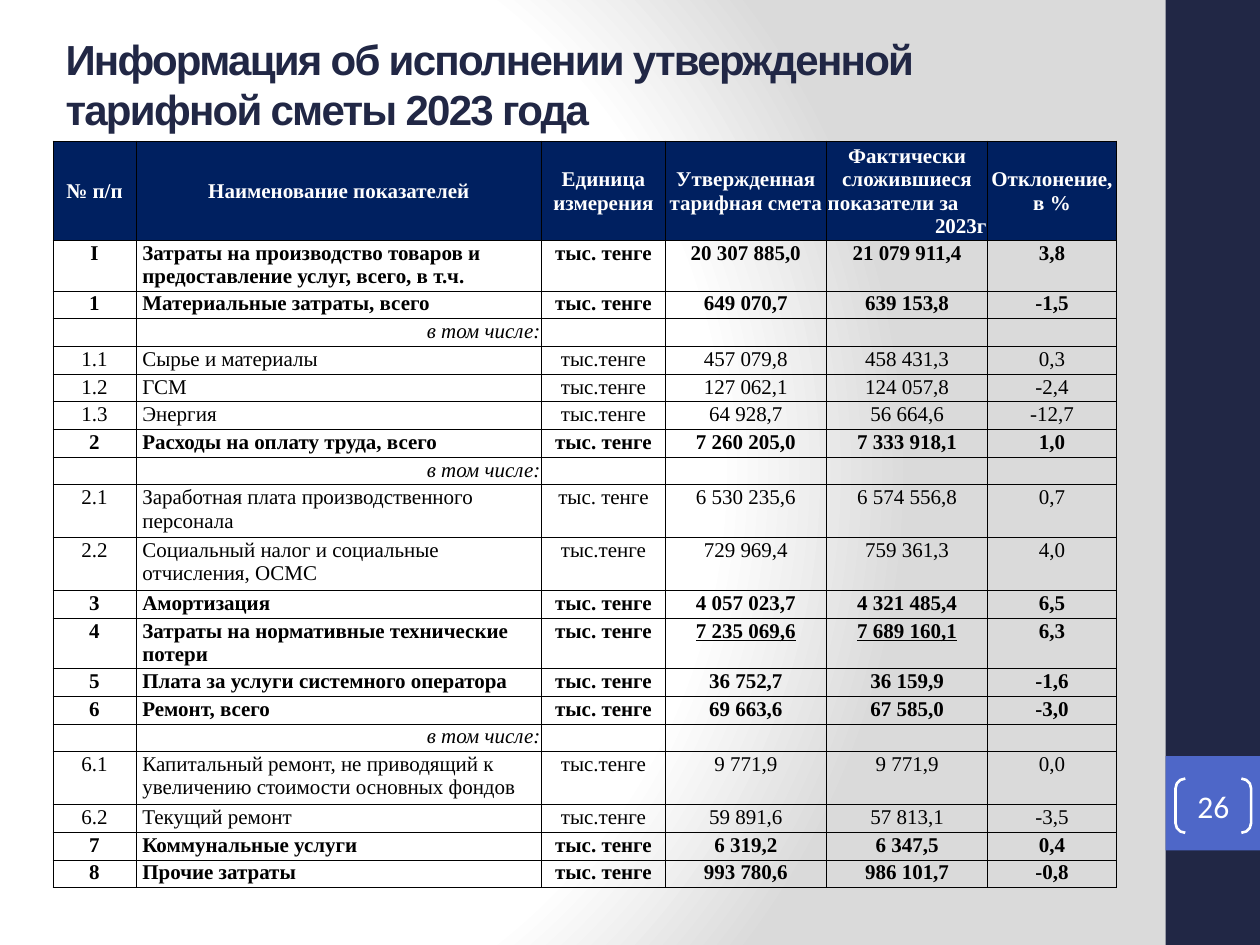
import pptx
import pptx.dml.color
import pptx.enum.shapes
import pptx.enum.text
import pptx.oxml
import pptx.oxml.ns
import pptx.util
from lxml import etree

Inches = pptx.util.Inches
Pt = pptx.util.Pt
qn = pptx.oxml.ns.qn
ALIGN = pptx.enum.text.PP_ALIGN
MIDDLE = pptx.enum.text.MSO_ANCHOR.MIDDLE
SHAPES = pptx.enum.shapes.MSO_SHAPE

NAVY, BLUE, HEADER, WHITE, BLACK = "212745", "4E67C8", "002060", "FFFFFF", "000000"

COLUMN_WIDTHS = [0.66, 3.22, 0.98, 1.28, 1.28, 1.02]
HEADER_HEIGHT, ROW_HEIGHT = 0.79, 0.22
# Heights of the rows whose names take two lines
TALL_ROWS = {"I": 0.4, "2.1": 0.42, "2.2": 0.42, "4": 0.4, "6.1": 0.42}
HEADINGS = [
    [("№ п/п", ALIGN.CENTER)],
    [("Наименование показателей", ALIGN.CENTER)],
    [("Единица измерения", ALIGN.CENTER)],
    [("Утвержденная тарифная смета", ALIGN.CENTER)],
    [("Фактически сложившиеся", ALIGN.CENTER), ("показатели за", ALIGN.LEFT), ("2023г", ALIGN.RIGHT)],
    [("Отклонение, в %", ALIGN.CENTER)],
]
INCLUDING = ("", "в том числе:", "", "", "", "")
COSTS = [
    ("I", "Затраты на производство товаров и предоставление услуг, всего, в т.ч.", "тыс. тенге",
     "20 307 885,0", "21 079 911,4", "3,8"),
    ("1", "Материальные затраты, всего", "тыс. тенге", "649 070,7", "639 153,8", "-1,5"),
    INCLUDING,
    ("1.1", "Сырье и материалы", "тыс.тенге", "457 079,8", "458 431,3", "0,3"),
    ("1.2", "ГСМ", "тыс.тенге", "127 062,1", "124 057,8", "-2,4"),
    ("1.3", "Энергия", "тыс.тенге", "64 928,7", "56 664,6", "-12,7"),
    ("2", "Расходы на оплату труда, всего", "тыс. тенге", "7 260 205,0", "7 333 918,1", "1,0"),
    INCLUDING,
    ("2.1", "Заработная плата производственного персонала", "тыс. тенге",
     "6 530 235,6", "6 574 556,8", "0,7"),
    ("2.2", "Социальный налог и социальные отчисления, ОСМС", "тыс.тенге",
     "729 969,4", "759 361,3", "4,0"),
    ("3", "Амортизация", "тыс. тенге", "4 057 023,7", "4 321 485,4", "6,5"),
    ("4", "Затраты на нормативные технические потери", "тыс. тенге",
     "7 235 069,6", "7 689 160,1", "6,3"),
    ("5", "Плата за услуги системного оператора", "тыс. тенге", "36 752,7", "36 159,9", "-1,6"),
    ("6", "Ремонт, всего", "тыс. тенге", "69 663,6", "67 585,0", "-3,0"),
    INCLUDING,
    ("6.1", "Капитальный ремонт, не приводящий к увеличению стоимости основных фондов", "тыс.тенге",
     "9 771,9", "9 771,9", "0,0"),
    ("6.2", "Текущий ремонт", "тыс.тенге", "59 891,6", "57 813,1", "-3,5"),
    ("7", "Коммунальные услуги", "тыс. тенге", "6 319,2", "6 347,5", "0,4"),
    ("8", "Прочие затраты", "тыс. тенге", "993 780,6", "986 101,7", "-0,8"),
]


def rgb(color):
    return pptx.dml.color.RGBColor.from_string(color)


def add_run(paragraph, text, size, font, color, bold=False, italic=False, underline=False):
    run = paragraph.add_run()
    run.text = text
    run.font.size, run.font.name = Pt(size), font
    run.font.color.rgb = rgb(color)
    run.font.bold, run.font.italic, run.font.underline = bold, italic, underline
    return run


def set_background(slide):
    """Radial gradient, white on the left and grey on the right."""
    fill = slide.background.fill
    fill.gradient()
    gradient = slide.element.find(".//" + qn("a:gradFill"))
    for child in list(gradient):
        gradient.remove(child)
    stops = etree.SubElement(gradient, qn("a:gsLst"))
    for position, color in [(0, WHITE), (75, WHITE), (100, "DADADA")]:
        stop = etree.SubElement(stops, qn("a:gs"), pos=str(position * 1000))
        etree.SubElement(stop, qn("a:srgbClr"), val=color)
    circle = etree.SubElement(gradient, qn("a:path"), path="circle")
    etree.SubElement(circle, qn("a:fillToRect"), l="20000", t="50000", r="100000", b="50000")


def add_block(slide, left, top, width, height, color):
    block = slide.shapes.add_shape(SHAPES.RECTANGLE, left, top, width, height)
    block.shadow.inherit = False
    block.fill.solid()
    block.fill.fore_color.rgb = rgb(color)
    block.line.fill.background()


def add_sidebar(slide, left, top, width, height):
    """Dark strip with the page number in brackets on a lighter square."""
    square_top = top + Inches(6)
    add_block(slide, left, top, width, height, NAVY)
    add_block(slide, left, square_top, width, width, BLUE)
    page = slide.shapes.add_shape(SHAPES.DOUBLE_BRACKET, left + Inches(0.08),
                                  square_top + Inches(0.18), Inches(0.6), Inches(0.43))
    page.adjustments[0] = 0.18
    page.shadow.inherit = False
    page.fill.background()
    page.line.color.rgb = rgb(WHITE)
    page.line.width = Pt(1.5)
    frame = page.text_frame
    frame.margin_left = frame.margin_right = frame.margin_top = frame.margin_bottom = 0
    frame.vertical_anchor = MIDDLE
    frame.paragraphs[0].alignment = ALIGN.CENTER
    add_run(frame.paragraphs[0], "26", 18, "Calibri", WHITE)


def place_title(slide, left, top, width, height):
    title = slide.shapes.title
    title.left, title.top, title.width, title.height = left, top, width, height
    frame = title.text_frame
    frame.word_wrap = True
    frame.auto_size = pptx.enum.text.MSO_AUTO_SIZE.NONE
    frame.vertical_anchor = MIDDLE
    frame.paragraphs[0].alignment = ALIGN.LEFT
    run = add_run(frame.paragraphs[0], "Информация об исполнении утвержденной тарифной сметы 2023 года",
                  24, "Arial", NAVY, bold=True)
    run.font.element.set("spc", "-100") if hasattr(run.font, "element") else \
        run._r.get_or_add_rPr().set("spc", "-100")


def add_borders(cell):
    properties = cell._tc.get_or_add_tcPr()
    for index, side in enumerate(["a:lnL", "a:lnR", "a:lnT", "a:lnB"]):
        line = etree.Element(qn(side), w=str(Pt(0.5)))
        fill = etree.SubElement(line, qn("a:solidFill"))
        etree.SubElement(fill, qn("a:srgbClr"), val=BLACK)
        properties.insert(index, line)


def fill_cell(cell, parts, **style):
    """Write (text, alignment) parts, one paragraph each, in a bordered cell."""
    cell.margin_left = cell.margin_right = cell.margin_top = Inches(0.01)
    cell.margin_bottom = 0
    frame = cell.text_frame
    for index, (text, alignment) in enumerate(parts):
        paragraph = frame.add_paragraph() if index else frame.paragraphs[0]
        paragraph.alignment = alignment
        if text:
            add_run(paragraph, text, 12, "Times New Roman", **style)
        else:
            etree.SubElement(paragraph._p, qn("a:endParaRPr"), sz="1200")
    add_borders(cell)


def add_costs_table(slide, left, top, width, height):
    table = slide.shapes.add_table(len(COSTS) + 1, len(HEADINGS), left, top, width, height).table
    table.first_row = table.horz_banding = False
    for column, column_width in zip(table.columns, COLUMN_WIDTHS):
        column.width = Inches(column_width)

    table.rows[0].height = Inches(HEADER_HEIGHT)
    for cell, parts in zip(table.rows[0].cells, HEADINGS):
        cell.fill.solid()
        cell.fill.fore_color.rgb = rgb(HEADER)
        cell.vertical_anchor = MIDDLE
        fill_cell(cell, parts, color=WHITE, bold=True)

    for row, values in zip(list(table.rows)[1:], COSTS):
        number = values[0]
        row.height = Inches(TALL_ROWS.get(number, ROW_HEIGHT))
        for column, (cell, text) in enumerate(zip(row.cells, values)):
            alignment = ALIGN.CENTER
            if column == 1:
                alignment = ALIGN.LEFT if number else ALIGN.RIGHT
            cell.fill.background()
            fill_cell(cell, [(text, alignment)], color=BLACK,
                      bold=bool(number) and "." not in number, italic=not number,
                      underline=number == "4" and column in (3, 4))
            if column == 1:
                indent = cell.text_frame.paragraphs[0]._p.get_or_add_pPr()
                indent.set("marL", str(Inches(0.04)))


def main():
    presentation = pptx.Presentation()
    presentation.slide_width, presentation.slide_height = Inches(10), Inches(7.5)
    slide = presentation.slides.add_slide(presentation.slide_layouts[5])
    set_background(slide)
    place_title(slide, Inches(0.42), Inches(0.21), Inches(8.27), Inches(0.91))
    add_sidebar(slide, Inches(9.25), 0, Inches(0.75), Inches(7.5))
    add_costs_table(slide, Inches(0.42), Inches(1.12), Inches(8.44), Inches(5.93))
    presentation.save("out.pptx")


if __name__ == "__main__":
    main()
